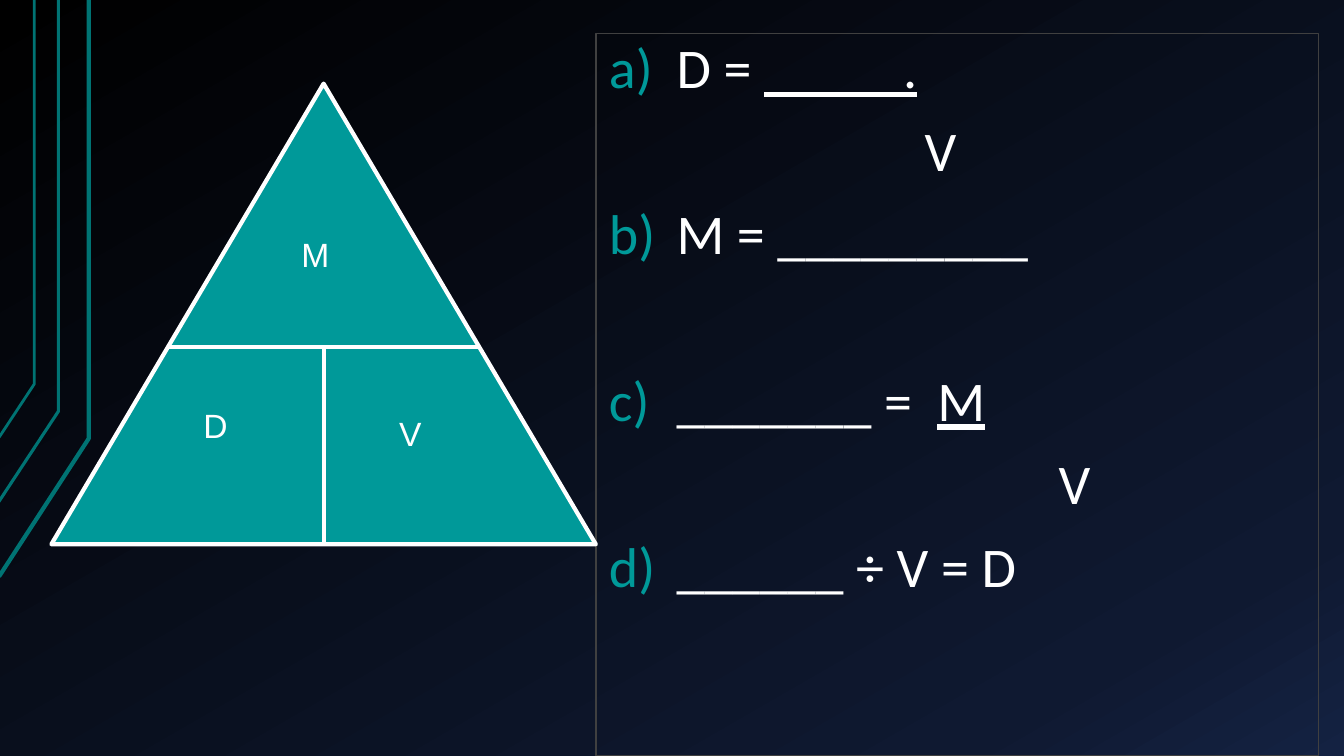
from lxml import etree
from pptx import Presentation
from pptx import util as u
from pptx.dml import color
from pptx.enum import shapes, text
from pptx.oxml import ns

TEAL, DARK_TEAL, WHITE, GREY = "009999", "007373", "FFFFFF", "404040"
BACKDROP = [(0, "000000"), (85, "0F1931"), (100, "142242")]
CIRCUIT = [  # points from the slide's left edge, line width
    ([(-0.01, 5.72), (0.88, 4.35), (0.88, 0)], 3),
    ([(-0.02, 4.99), (0.58, 4.08), (0.58, 0)], 2.25),
    ([(-0.01, 4.34), (0.34, 3.81), (0.34, 0)], 2),
]
EXERCISES = [  # number, plain text, underlined text, left indent, space before
    (1, "D = ", "           .", 0.67, 16),
    (None, "V", "", 3.13, 16),
    (2, "M = _________", "", 0.67, 16),
    (3, "_______ =  ", "M", 0.67, 76),
    (None, "V", "", 4.46, 16),
    (4, "______ ÷ V = D", "", 0.67, 16),
]


def rgb(value):
    return color.RGBColor.from_string(value)


def add_xml(parent, tag, **attributes):
    return etree.SubElement(parent, ns.qn(tag), attributes)


def style_line(shape, value, width):
    shape.line.color.rgb = rgb(value)
    shape.line.width = u.Pt(width)


def style_span(span, font, size):
    span.font.name = font
    span.font.size = u.Pt(size)
    span.font.color.rgb = rgb(WHITE)


def paint_background(page):
    fill = page.background.fill
    fill.gradient()
    fill.gradient_angle = 300
    stops = page.element.find(".//" + ns.qn("a:gsLst"))
    for stop in list(stops):
        stops.remove(stop)
    for position, value in BACKDROP:
        stop = add_xml(stops, "a:gs", pos=str(position * 1000))
        add_xml(stop, "a:srgbClr", val=value)


def draw_circuit(page):
    for points, width in CIRCUIT:
        places = [(u.Inches(x), u.Inches(y)) for x, y in points]
        builder = page.shapes.build_freeform(*places[0])
        builder.add_line_segments(places[1:], close=False)
        trace = builder.convert_to_shape()
        trace.shadow.inherit = False
        trace.fill.background()
        style_line(trace, DARK_TEAL, width)


def write_exercises(page, left, top, width, height):
    box = page.placeholders[1]
    box.left, box.top = u.Inches(left), u.Inches(top)
    box.width, box.height = u.Inches(width), u.Inches(height)
    style_line(box, GREY, 1)
    frame = box.text_frame
    frame.auto_size = text.MSO_AUTO_SIZE.NONE
    frame.vertical_anchor = text.MSO_ANCHOR.TOP
    frame.margin_left = frame.margin_right = u.Inches(0.13)
    frame.margin_top = frame.margin_bottom = u.Inches(0.07)

    for index, (number, plain, underlined, indent, before) in enumerate(EXERCISES):
        para = frame.add_paragraph() if index else frame.paragraphs[0]
        para.line_spacing = 0.9
        para.space_before = u.Pt(before)
        for words in filter(None, (plain, underlined)):
            span = para.add_run()
            span.text = words
            style_span(span, "Calibri", 40)
            span.font.underline = words == underlined

        # Numbered lines hang; denominators are only indented
        layout = para._p.get_or_add_pPr()
        layout.set("marL", str(u.Inches(indent)))
        layout.set("indent", str(u.Inches(-indent if number else 0)))
        if number:
            add_xml(add_xml(layout, "a:buClr"), "a:srgbClr", val=TEAL)
            add_xml(layout, "a:buFont", typeface="Calibri")
            add_xml(layout, "a:buAutoNum", type="alphaLcParenR", startAt=str(number))
        else:
            add_xml(layout, "a:buNone")


def draw_divider(page, start, end):
    divider = page.shapes.add_connector(
        shapes.MSO_CONNECTOR.STRAIGHT, *map(u.Inches, start + end))
    add_xml(divider._element.spPr, "a:effectLst")
    style_line(divider, WHITE, 3)


def draw_formula_triangle(page, left, top, width, height):
    triangle = page.shapes.add_shape(
        shapes.MSO_SHAPE.ISOSCELES_TRIANGLE,
        *map(u.Inches, (left, top, width, height)))
    triangle.shadow.inherit = False
    triangle.fill.solid()
    triangle.fill.fore_color.rgb = rgb(TEAL)
    style_line(triangle, WHITE, 3)

    # Dividers: the crossbar spans the triangle at its own height
    middle, drop = left + width / 2, 2.61
    reach = width / 2 * drop / height
    bar = top + drop
    draw_divider(page, (middle - reach, bar), (middle + reach, bar))
    draw_divider(page, (middle, bar), (middle, top + height))

    # Letters
    for letter, x, y in [("D", 1.41, 3.14), ("M", 2.38, 1.44), ("V", 3.35, 3.22)]:
        label = page.shapes.add_textbox(
            *map(u.Inches, (left + x, top + y, 0.97, 0.83)))
        label.text_frame.word_wrap = True
        label.text_frame.text = letter
        style_span(label.text_frame.paragraphs[0].runs[0], "Arial", 24)


def main():
    deck = Presentation()
    deck.slide_width, deck.slide_height = u.Inches(13.33), u.Inches(7.5)
    page = deck.slides.add_slide(deck.slide_layouts[1])
    title = page.shapes.title.element
    title.getparent().remove(title)
    paint_background(page)
    draw_circuit(page)
    write_exercises(page, 5.91, 0.33, 7.17, 7.17)
    draw_formula_triangle(page, 0.51, 0.83, 5.4, 4.57)
    deck.save("out.pptx")


if __name__ == "__main__":
    main()
